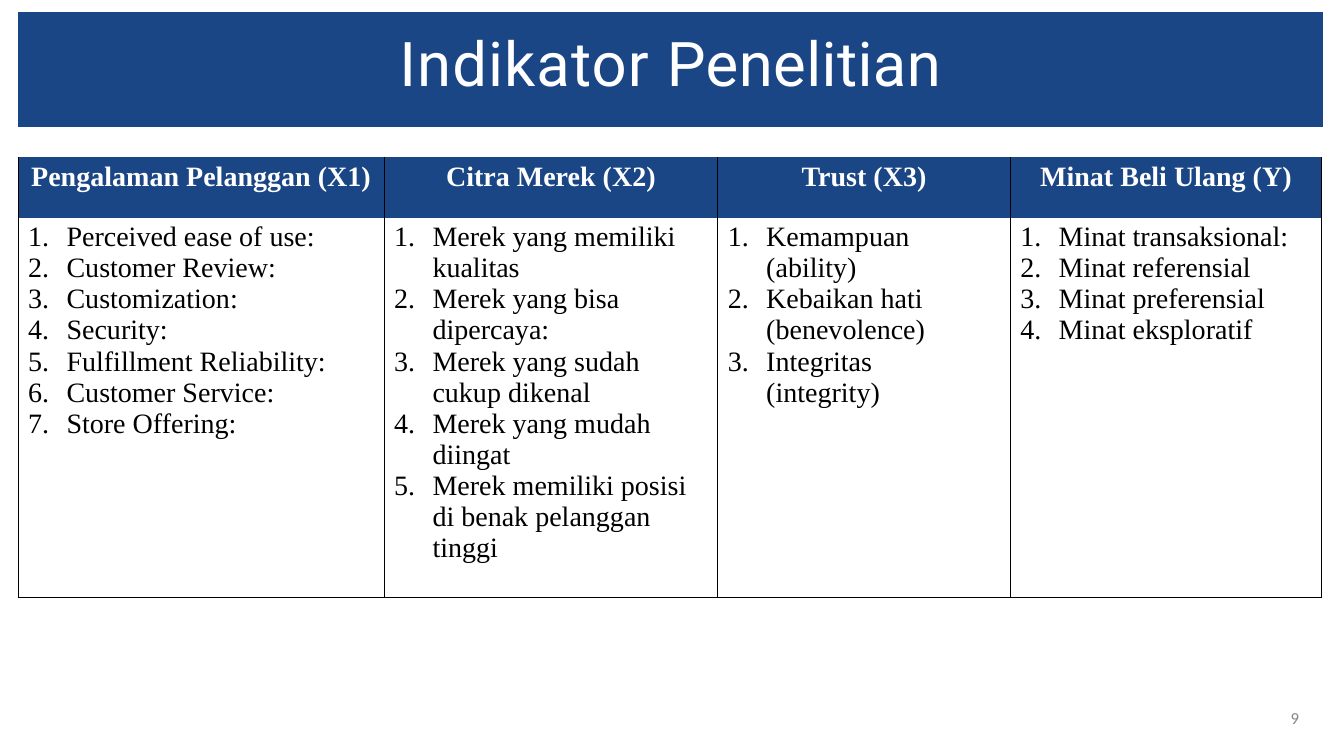
"""Build the slide "Indikator Penelitian" with its table of research indicators."""
from lxml.etree import SubElement
from pptx import Presentation
from pptx.dml.color import RGBColor
from pptx.enum.shapes import MSO_SHAPE
from pptx.enum.text import MSO_ANCHOR, PP_ALIGN
from pptx.oxml.ns import qn
from pptx.util import Inches, Pt

NAVY, WHITE, BLACK, GRAY = "1B4685", "FFFFFF", "000000", "878787"


def color(hex_code):
    return RGBColor.from_string(hex_code)


def add_text(paragraph, text, font_name, size, hex_code, bold=False, spacing=0):
    run = paragraph.add_run()
    run.text = text
    font_values = {"name": font_name, "size": Pt(size), "bold": bold}
    for name, value in font_values.items():
        setattr(run.font, name, value)
    run.font.color.rgb = color(hex_code)
    if spacing:
        run._r.get_or_add_rPr().set("spc", str(spacing))


indicators = [
    ("Pengalaman Pelanggan (X1)", 3.63, 0.25, [
        "Perceived ease of use:", "Customer Review:", "Customization:", "Security:",
        "Fulfillment Reliability:", "Customer Service:", "Store Offering:"]),
    ("Citra Merek (X2)", 3.31, 0.25, [
        "Merek yang memiliki kualitas", "Merek yang bisa dipercaya:",
        "Merek yang sudah cukup dikenal", "Merek yang mudah diingat",
        "Merek memiliki posisi di benak pelanggan tinggi"]),
    ("Trust (X3)", 2.9, 0.5, [
        "Kemampuan (ability)", "Kebaikan hati (benevolence)", "Integritas (integrity)"]),
    ("Minat Beli Ulang (Y)", 3.09, 0.25, [
        "Minat transaksional:", "Minat referensial", "Minat preferensial",
        "Minat eksploratif"]),
]

prs = Presentation()
prs.slide_width, prs.slide_height = Inches(13.33), Inches(7.5)
slide = prs.slides.add_slide(prs.slide_layouts[6])

title = slide.shapes.add_shape(
    MSO_SHAPE.RECTANGLE, Inches(0.18), Inches(0.12), Inches(12.94), Inches(1.14))
title.shadow.inherit = False
title.fill.solid()
title.fill.fore_color.rgb = color(NAVY)
title.line.fill.background()
page_number = slide.shapes.add_textbox(
    Inches(12.76), Inches(7.05), Inches(0.26), Inches(0.19))

for frame, left, top in ((title.text_frame, 0, 0.13), (page_number.text_frame, 0.04, 0)):
    frame_values = {
        "margin_left": Inches(left), "margin_top": Inches(top), "margin_right": 0,
        "margin_bottom": 0, "word_wrap": True, "vertical_anchor": MSO_ANCHOR.TOP}
    for name, value in frame_values.items():
        setattr(frame, name, value)

heading = title.text_frame.paragraphs[0]
heading.alignment = PP_ALIGN.CENTER
add_text(heading, "Indikator ", "Roboto", 44, WHITE, spacing=80)
add_text(heading, "Penelitian", "Roboto", 44, WHITE, spacing=30)

number = page_number.text_frame.paragraphs[0]
number.line_spacing = Pt(12.4)
add_text(number, "9", "Calibri", 12, GRAY)

table = slide.shapes.add_table(
    2, len(indicators), Inches(0.18), Inches(1.56), Inches(12.94), Inches(4.37)).table
table.first_row = table.horz_banding = False
table.rows[0].height, table.rows[1].height = Inches(0.6), Inches(3.77)

for column, (variable, width, right_margin, items) in enumerate(indicators):
    table.columns[column].width = Inches(width)
    header, body = table.cell(0, column), table.cell(1, column)

    for cell, right, ruled_sides in ((header, 0, "LR"), (body, right_margin, "LRB")):
        cell_values = {
            "margin_left": 0, "margin_top": Inches(0.04),
            "margin_right": Inches(right), "margin_bottom": 0}
        for name, value in cell_values.items():
            setattr(cell, name, value)
        properties = cell._tc.get_or_add_tcPr()
        for side in "LRTB":
            border = SubElement(properties, qn(f"a:ln{side}"), w=str(Pt(1)))
            if side in ruled_sides:
                ink = SubElement(border, qn("a:solidFill"))
                SubElement(ink, qn("a:srgbClr"), val=BLACK)
            else:
                SubElement(border, qn("a:noFill"))

    header.fill.solid()
    header.fill.fore_color.rgb = color(NAVY)
    header_line = header.text_frame.paragraphs[0]
    header_line.alignment = PP_ALIGN.CENTER
    add_text(header_line, variable, "Times New Roman", 20, WHITE, bold=True)

    body.fill.background()
    for position, item in enumerate(items):
        lines = body.text_frame
        line = lines.add_paragraph() if position else lines.paragraphs[0]
        layout = line._p.get_or_add_pPr()
        layout.set("marL", str(Inches(0.48)))
        layout.set("indent", str(Inches(-0.38)))
        SubElement(layout, qn("a:buFont"), typeface="Times New Roman")
        SubElement(layout, qn("a:buAutoNum"), type="arabicPeriod")
        add_text(line, item, "Times New Roman", 20, BLACK)

prs.save("out.pptx")
